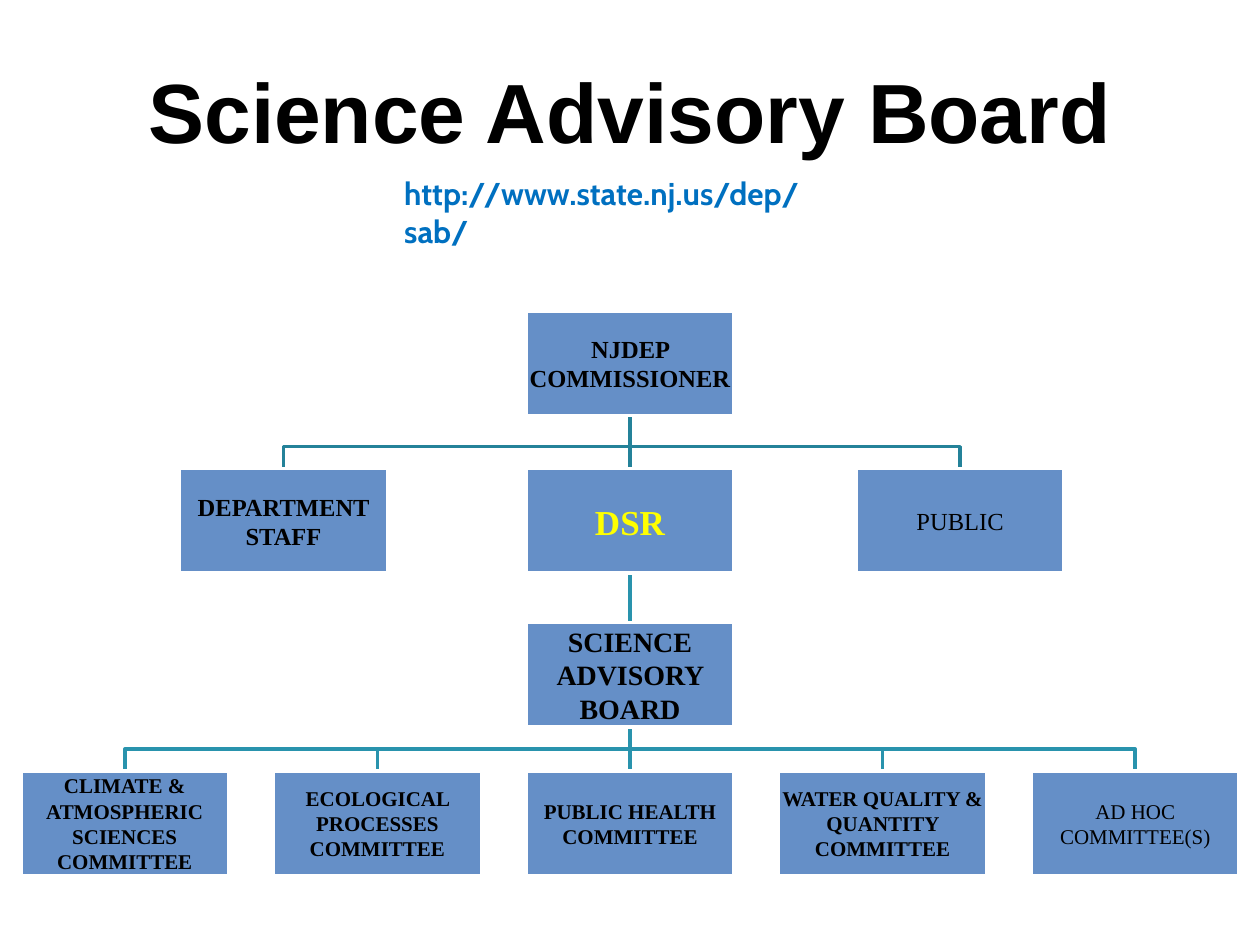
from lxml import etree
from pptx import Presentation
from pptx import util as u
from pptx.dml.color import RGBColor
from pptx.enum import shapes, text
from pptx.oxml.ns import qn

BOX_W, BOX_H = 1.65, 0.83
CENTER = 5
COMMISSIONER_TOP, STAFF_TOP, BOARD_TOP, COMMITTEE_TOP = 2.47, 3.72, 4.94, 6.12
UPPER_LINE, LOWER_LINE = "248299", "2993AD"
STAFF = [
    (2.25, "DEPARTMENT STAFF", {}),
    (CENTER, "DSR", {"size": 20, "color": "FFFF00"}),
    (7.62, "PUBLIC", {"bold": False}),
]
COMMITTEES = [
    ("CLIMATE & ATMOSPHERIC SCIENCES COMMITTEE", True),
    ("ECOLOGICAL PROCESSES COMMITTEE", True),
    ("PUBLIC HEALTH COMMITTEE", True),
    ("WATER QUALITY & QUANTITY COMMITTEE", True),
    ("AD HOC COMMITTEE(S)", False),
]


def rgb(value):
    """Turn a hex string into a colour."""
    return RGBColor.from_string(value)


def write(frame, words, size=14, font="Times New Roman", color="000000",
          bold=True, align=text.PP_ALIGN.CENTER,
          anchor=text.MSO_ANCHOR.MIDDLE, inset=None):
    """Put formatted words in a text frame."""
    frame.word_wrap = True
    frame.vertical_anchor = anchor
    if inset is not None:
        frame.margin_left = frame.margin_right = u.Inches(inset)
        frame.margin_top = frame.margin_bottom = u.Inches(inset)
    paragraph = frame.paragraphs[0]
    paragraph.alignment = align
    run = paragraph.add_run()
    run.text = words
    run.font.name = font
    run.font.size = u.Pt(size)
    run.font.bold = bold
    run.font.color.rgb = rgb(color)


def add_title(slide, words):
    """Place and fill the title."""
    title = slide.shapes.title
    title.left, title.top = u.Inches(0.5), u.Inches(0.25)
    title.width, title.height = u.Inches(9), u.Inches(1.25)
    write(title.text_frame, words, size=48, font="Arial")


def add_address(slide, words):
    """Add the web address under the title."""
    address = slide.shapes.add_textbox(
        u.Inches(3.11), u.Inches(1.33), u.Inches(3.78), u.Inches(0.4))
    write(address.text_frame, words, size=18, font="Cabin", color="0070C0",
          align=text.PP_ALIGN.LEFT, anchor=text.MSO_ANCHOR.TOP)


def add_box(slide, center, top, words, **style):
    """Add one chart box centred on a horizontal position."""
    box = slide.shapes.add_shape(
        shapes.MSO_SHAPE.RECTANGLE, u.Inches(center - BOX_W / 2),
        u.Inches(top), u.Inches(BOX_W), u.Inches(BOX_H))
    box.shadow.inherit = False
    box.fill.solid()
    box.fill.fore_color.rgb = rgb("658FC7")
    box.line.color.rgb = rgb("FFFFFF")
    box.line.width = u.Pt(2)
    write(box.text_frame, words, inset=0.01, **style)


def add_branch(slide, parent_top, child_center, child_top, color):
    """Join a centred parent box to a child box below it."""
    start = parent_top + BOX_H
    if child_center == CENTER:
        branch = slide.shapes.add_connector(
            shapes.MSO_CONNECTOR.STRAIGHT, u.Inches(CENTER), u.Inches(start),
            u.Inches(CENTER), u.Inches(child_top))
        etree.SubElement(branch._element.spPr, qn("a:effectLst"))
    else:
        # The bend sits a fixed distance above the child row.
        bend = child_top - 0.175
        builder = slide.shapes.build_freeform(u.Inches(CENTER), u.Inches(start))
        corners = [(CENTER, bend), (child_center, bend),
                   (child_center, child_top)]
        builder.add_line_segments(
            [(u.Inches(x), u.Inches(y)) for x, y in corners], close=False)
        branch = builder.convert_to_shape()
        branch.shadow.inherit = False
        branch.fill.background()
    branch.line.color.rgb = rgb(color)
    branch.line.width = u.Pt(2)


def main():
    """Build the organisation chart slide."""
    deck = Presentation()
    deck.slide_width, deck.slide_height = u.Inches(10), u.Inches(7.5)
    slide = deck.slides.add_slide(deck.slide_layouts[5])
    add_title(slide, "Science Advisory Board")

    committees = [(CENTER + 2.005 * (i - 2), words, bold)
                  for i, (words, bold) in enumerate(COMMITTEES)]
    for center, _, _ in STAFF:
        add_branch(slide, COMMISSIONER_TOP, center, STAFF_TOP, UPPER_LINE)
    add_branch(slide, STAFF_TOP, CENTER, BOARD_TOP, LOWER_LINE)
    for center, _, _ in committees:
        add_branch(slide, BOARD_TOP, center, COMMITTEE_TOP, LOWER_LINE)

    add_box(slide, CENTER, COMMISSIONER_TOP, "NJDEP COMMISSIONER")
    for center, words, style in STAFF:
        add_box(slide, center, STAFF_TOP, words, **style)
    add_box(slide, CENTER, BOARD_TOP, "SCIENCE ADVISORY BOARD", size=16)
    for center, words, bold in committees:
        add_box(slide, center, COMMITTEE_TOP, words, size=12, bold=bold)

    add_address(slide, "http://www.state.nj.us/dep/sab/")
    deck.save("out.pptx")


if __name__ == "__main__":
    main()
